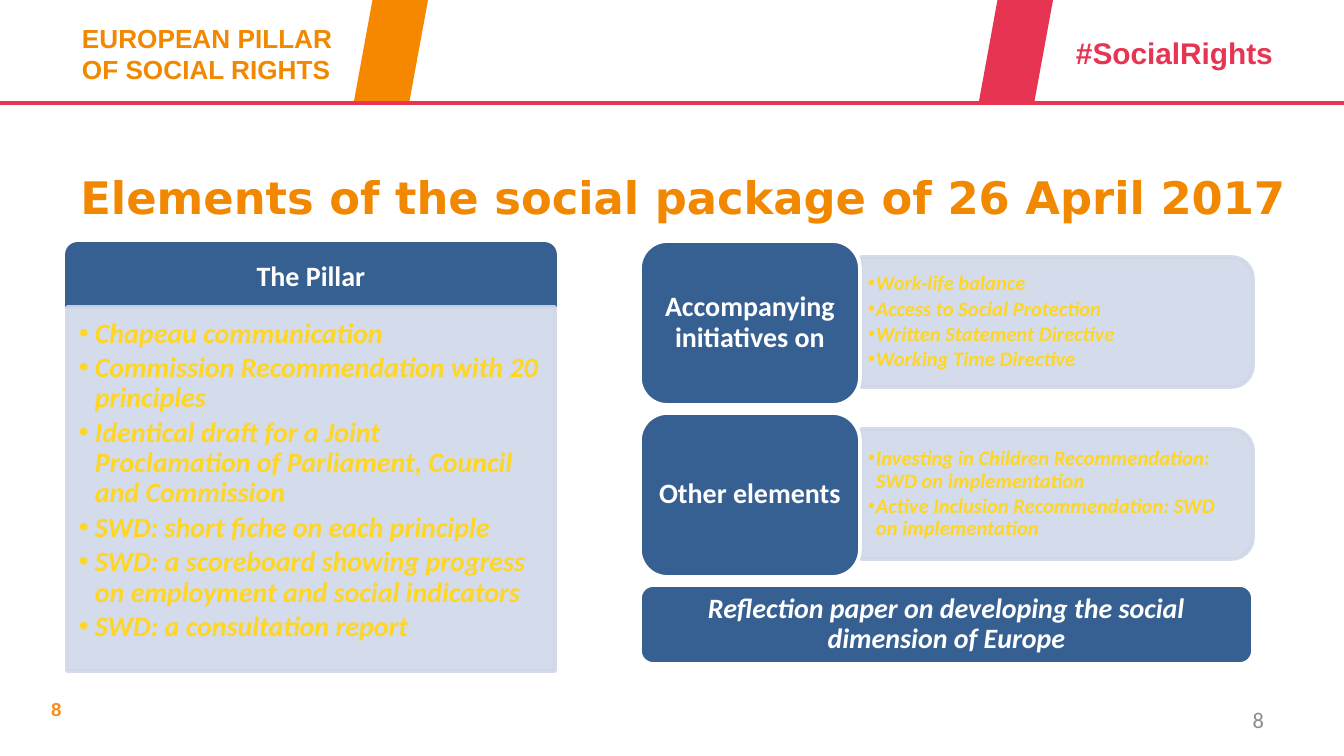
from lxml import etree
from pptx import Presentation, util as u
from pptx.dml.color import RGBColor
from pptx.enum import shapes, text
from pptx.oxml import ns

SCALE = 914400 / 134.4
ORANGE = RGBColor(0xF1, 0x88, 0x00)
AMBER = RGBColor(0xF6, 0x88, 0x00)
TANGERINE = RGBColor(0xF6, 0x8B, 0x20)
RED = RGBColor(0xE7, 0x34, 0x52)
BLUE = RGBColor(0x37, 0x60, 0x92)
PALE = RGBColor(0xD0, 0xD8, 0xE8)
YELLOW = RGBColor(0xFF, 0xD6, 0x24)
GREY = RGBColor(0x8C, 0x8C, 0x8C)
WHITE = RGBColor(0xFF, 0xFF, 0xFF)
KIND = shapes.MSO_SHAPE
ALIGN = text.PP_ALIGN
ANCHOR = text.MSO_ANCHOR

PILLAR = [
    "Chapeau communication",
    "Commission Recommendation with 20 principles",
    "Identical draft for a Joint Proclamation of Parliament, Council and Commission",
    "SWD: short fiche on each principle",
    "SWD: a scoreboard showing progress on employment and social indicators",
    "SWD: a consultation report",
]
GROUPS = [
    ("Accompanying initiatives on", [
        "Work-life balance",
        "Access to Social Protection",
        "Written Statement Directive",
        "Working Time Directive",
    ]),
    ("Other elements", [
        "Investing in Children Recommendation: SWD on implementation",
        "Active Inclusion Recommendation: SWD on implementation",
    ]),
]


def px(n):
    return u.Emu(round(n * SCALE))


def place(item, box):
    item.left, item.top, item.width, item.height = map(px, box)


def bullet(par, indent):
    props = par._p.get_or_add_pPr()
    props.set("marL", str(px(indent)))
    props.set("indent", str(-px(indent)))
    etree.SubElement(props, ns.qn("a:buChar"), char="•")


def write(item, lines, *, size, color, font="Calibri", bold=True, italic=False,
          align=ALIGN.LEFT, anchor=ANCHOR.MIDDLE, inset=(13, 7, 13, 7),
          indent=0, spacing=1.0, after=0):
    frame = item.text_frame
    frame.word_wrap = True
    frame.auto_size = text.MSO_AUTO_SIZE.NONE
    frame.vertical_anchor = anchor
    (frame.margin_left, frame.margin_top,
     frame.margin_right, frame.margin_bottom) = map(px, inset)
    frame.text = "\n".join(lines)
    for par, line in zip(frame.paragraphs, lines):
        if indent:
            bullet(par, indent)
        par.alignment = align
        par.line_spacing = spacing
        par.space_before = u.Pt(0)
        par.space_after = u.Pt(after)
        for run in par.runs:
            face = run.font
            face.name, face.size = font, u.Pt(size)
            face.bold, face.italic = bold, italic
            face.color.rgb = color


def label(slide, box, line, **form):
    item = slide.shapes.add_textbox(*map(px, box))
    write(item, [line], **form)


def block(slide, kind, box, fill, edge=None):
    item = slide.shapes.add_shape(kind, *map(px, box))
    item.shadow.inherit = False
    item.fill.solid()
    item.fill.fore_color.rgb = fill
    if edge is None:
        item.line.fill.background()
    else:
        item.line.color.rgb = edge
        item.line.width = u.Pt(2)
    return item


def panel(slide, kind, box, turn=0):
    item = block(slide, kind, box, PALE, PALE)
    item.rotation = turn
    for color in item.element.spPr.iter(ns.qn("a:srgbClr")):
        etree.SubElement(color, ns.qn("a:alpha"), val="90000")


def tile(slide, kind, box, line, edge=WHITE, italic=False):
    item = block(slide, kind, box, BLUE, edge)
    write(item, [line], size=15, color=WHITE, italic=italic,
          align=ALIGN.CENTER, inset=(8, 4, 8, 4), spacing=0.9)


def points(slide, body, box, lines, **form):
    place(body, box)
    write(body, lines, color=YELLOW, italic=True, spacing=0.9, **form)
    slide.shapes.element.append(body.element)


def rule(slide, y):
    line = slide.shapes.add_connector(
        shapes.MSO_CONNECTOR.STRAIGHT, 0, px(y), px(1344), px(y))
    line.line.color.rgb = RED
    line.line.width = u.Pt(2.25)
    etree.SubElement(line.element.spPr, ns.qn("a:effectLst"))


def header(slide):
    label(slide, (38, 691, 293, 36), "8", size=10, color=TANGERINE,
          font="Arial", anchor=ANCHOR.TOP)
    label(slide, (69, 15, 341, 77), "EUROPEAN PILLAR\vOF SOCIAL RIGHTS",
          size=14, color=ORANGE, font="Arial", anchor=ANCHOR.TOP)
    rule(slide, 103)
    label(slide, (1063, 28, 233, 50), "#SocialRights", size=16, color=RED,
          font="Arial", anchor=ANCHOR.TOP)
    for x, fill in ((354, AMBER), (979, RED)):
        block(slide, KIND.PARALLELOGRAM, (x, 0, 74, 101), fill)
    label(slide, (964, 700, 313, 40), "8", size=12, color=GREY, bold=False,
          align=ALIGN.RIGHT)


def main():
    deck = Presentation()
    deck.slide_width, deck.slide_height = px(1344), px(756)
    slide = deck.slides.add_slide(deck.slide_layouts[4])
    title, main_list, *side_lists, spare = slide.placeholders
    spare.element.getparent().remove(spare.element)

    header(slide)
    place(title, (22, 145, 1322, 103))
    write(title, ["Elements of the social package of 26 April 2017"],
          size=24, color=ORANGE, font="DejaVu Sans", align=ALIGN.CENTER)

    tile(slide, KIND.ROUND_2_SAME_RECTANGLE, (67, 244, 488, 63), "The Pillar",
         edge=BLUE)
    box = (67, 307, 488, 364)
    panel(slide, KIND.RECTANGLE, box)
    points(slide, main_list, box, PILLAR, size=15, anchor=ANCHOR.TOP,
           inset=(12, 12, 16, 17), indent=16, after=2.25)

    for row, (body, (name, lines)) in enumerate(zip(side_lists, GROUPS)):
        y = 241 + row * 172
        panel(slide, KIND.ROUND_2_SAME_RECTANGLE, (992, y - 115, 130, 392), 90)
        points(slide, body, (861, y + 22, 387, 118), lines, size=11,
               inset=(7, 3, 7, 3), indent=8, after=1.65)
        tile(slide, KIND.ROUNDED_RECTANGLE, (640, y, 220, 164), name)

    tile(slide, KIND.ROUNDED_RECTANGLE, (640, 585, 613, 79),
         "Reflection paper on developing the social dimension of Europe",
         italic=True)
    deck.save("out.pptx")


if __name__ == "__main__":
    main()
